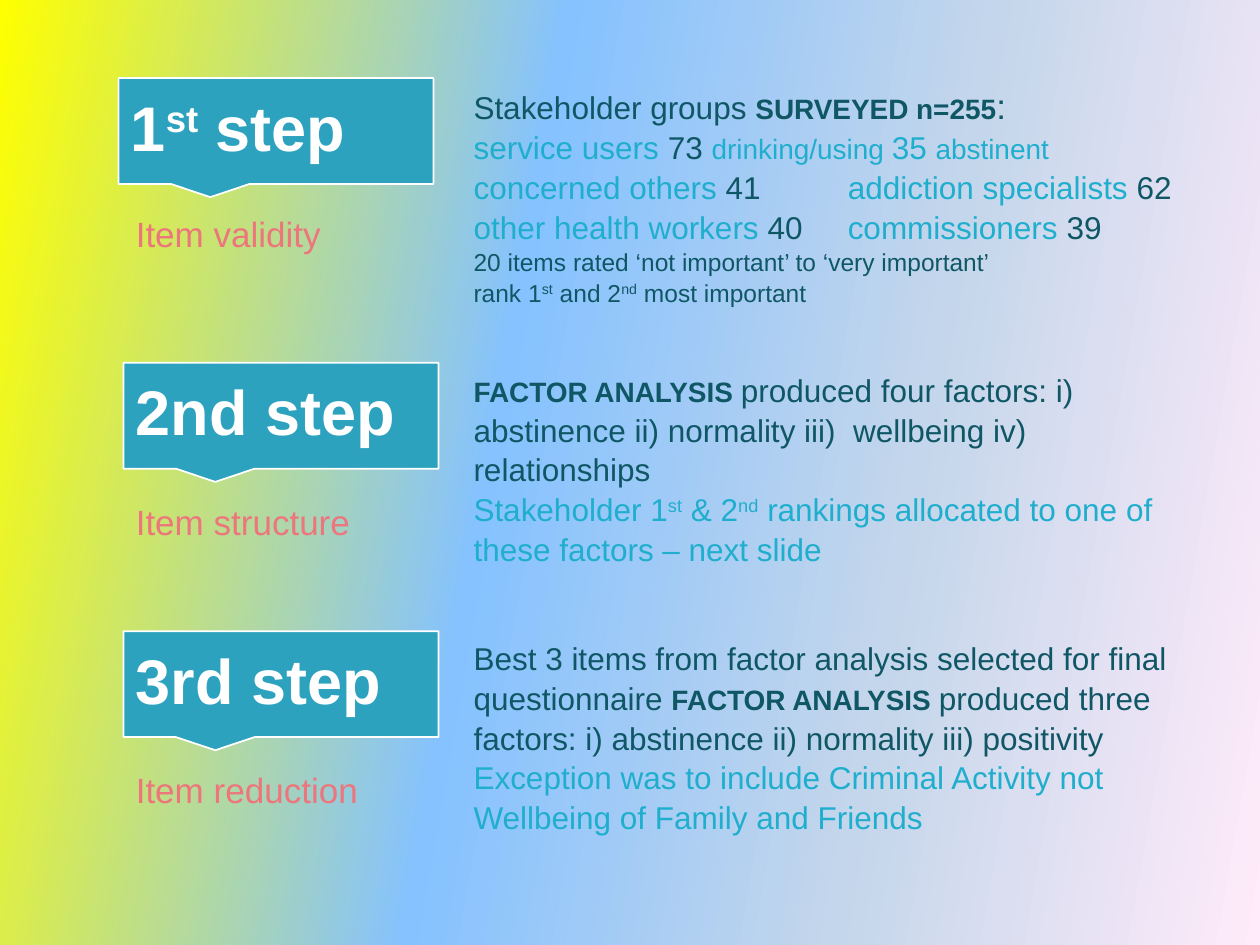
import copy

import pptx
import pptx.dml.color
import pptx.enum.shapes
import pptx.enum.text
import pptx.oxml
import pptx.oxml.ns
import pptx.util

COLUMNS, ROWS = 100, 75
CELL = pptx.util.Inches(0.1)
FONT = "Arial"
LINE_SPACING = 1.05
TAB_COLUMN = 29.7
CALLOUT_SIZE = (25, 8.4)
LABEL_SIZE = (24.4, 4.4)
LABEL_COLUMN, DETAIL_COLUMN, DETAIL_WIDTH = 9.8, 36.6, 59.8

COLORS = {
    "dark": "105766",
    "bright": "1FAECD",
    "label": "EC767C",
    "callout": "2DA2BF",
    "white": "FFFFFF",
}
BACKGROUND_STOPS = [(0, "FFFF00"), (40, "85C2FF"), (70, "C4D6EB"), (100, "FFEBFA")]

STYLES = {
    "heading": (36, "white", True, False),
    "heading super": (36, "white", True, True),
    "label": (20, "label", False, False),
    "dark": (18, "dark", False, False),
    "bright": (18, "bright", False, False),
    "bright super": (18, "bright", False, True),
    "strong": (16, "dark", True, False),
    "colon": (20, "dark", False, False),
    "minor": (16, "bright", False, False),
    "note": (14, "dark", False, False),
    "note super": (14, "dark", False, True),
}

STEPS = [
    {
        "heading": [("1", "heading"), ("st", "heading super"), (" step", "heading")],
        "callout": (9.4, 6.2),
        "label": "Item validity",
        "label_row": 16.2,
        "detail_row": 5.2,
        "detail_height": 20.5,
        "anchor": "MIDDLE",
        "detail": [
            [("Stakeholder groups ", "dark"), ("SURVEYED n=255", "strong"), (":", "colon")],
            [("service users ", "bright"), ("73 ", "dark"), ("drinking/using ", "minor"),
             ("35 ", "bright"), ("abstinent", "minor")],
            [("concerned others ", "bright"), ("41\t", "dark"),
             ("addiction specialists ", "bright"), ("62", "dark")],
            [("other health workers ", "bright"), ("40\t", "dark"),
             ("commissioners ", "bright"), ("39", "dark")],
            [("20 items rated ‘not important’ to ‘very important’", "note")],
            [("rank 1", "note"), ("st", "note super"), (" and 2", "note"),
             ("nd", "note super"), (" most important", "note")],
        ],
    },
    {
        "heading": [("2nd step", "heading")],
        "callout": (9.8, 28.8),
        "label": "Item structure",
        "label_row": 39.1,
        "detail_row": 28.8,
        "detail_height": 16.2,
        "anchor": "TOP",
        "detail": [
            [("FACTOR ANALYSIS ", "strong"),
             ("produced four factors: i) abstinence ii) normality iii)  wellbeing "
              "iv) relationships", "dark")],
            [("Stakeholder 1", "bright"), ("st", "bright super"), (" & 2", "bright"),
             ("nd", "bright super"),
             (" rankings allocated to one of these factors – next slide", "bright")],
        ],
    },
    {
        "heading": [("3rd step", "heading")],
        "callout": (9.8, 50.1),
        "label": "Item reduction",
        "label_row": 60.3,
        "detail_row": 50.1,
        "detail_height": 16.2,
        "anchor": "TOP",
        "detail": [
            [("Best 3 items from factor analysis selected for final questionnaire ", "dark"),
             ("FACTOR ANALYSIS ", "strong"),
             ("produced three factors: i) abstinence ii) normality iii) positivity", "dark")],
            [("Exception was to include Criminal Activity not Wellbeing of Family "
              "and Friends", "bright")],
        ],
    },
]


def rgb(name):
    return pptx.dml.color.RGBColor.from_string(COLORS[name])


def cells(*counts):
    return [int(count * CELL) for count in counts]


def paint_background(slide):
    fill = slide.background.fill
    fill.gradient()
    fill.gradient_angle = 350
    stops = slide.element.find(".//" + pptx.oxml.ns.qn("a:gsLst"))
    template = copy.deepcopy(stops[0])
    for stop in list(stops):
        stops.remove(stop)
    for _ in BACKGROUND_STOPS:
        stops.append(copy.deepcopy(template))
    for stop, (position, color) in zip(fill.gradient_stops, BACKGROUND_STOPS):
        stop.position = position / 100
        stop.color.rgb = pptx.dml.color.RGBColor.from_string(color)


def add_tab_stop(paragraph):
    properties = paragraph._p.get_or_add_pPr()
    tabs = pptx.oxml.parse_xml(
        f'<a:tabLst {pptx.oxml.ns.nsdecls("a")}>'
        f'<a:tab pos="{cells(TAB_COLUMN)[0]}" algn="l"/></a:tabLst>'
    )
    properties.append(tabs)


def write_runs(paragraph, pieces):
    paragraph.alignment = pptx.enum.text.PP_ALIGN.LEFT
    paragraph.line_spacing = LINE_SPACING
    for text, style in pieces:
        size, color, bold, raised = STYLES[style]
        run = paragraph.add_run()
        run.text = text
        run.font.name = FONT
        run.font.size = pptx.util.Pt(size)
        run.font.bold = bold
        run.font.color.rgb = rgb(color)
        if raised:
            run._r.get_or_add_rPr().set("baseline", "30000")
    if any("\t" in text for text, _ in pieces):
        add_tab_stop(paragraph)


def fill_frame(frame, lines, anchor="TOP"):
    frame.word_wrap = True
    frame.vertical_anchor = pptx.enum.text.MSO_ANCHOR[anchor]
    for index, pieces in enumerate(lines):
        paragraph = frame.add_paragraph() if index else frame.paragraphs[0]
        write_runs(paragraph, pieces)


def add_callout(slide, column, row, heading):
    callout = slide.shapes.add_shape(
        pptx.enum.shapes.MSO_SHAPE.RECTANGULAR_CALLOUT, *cells(column, row, *CALLOUT_SIZE)
    )
    callout.shadow.inherit = False
    callout.fill.solid()
    callout.fill.fore_color.rgb = rgb("callout")
    callout.line.color.rgb = rgb("white")
    callout.line.width = pptx.util.Pt(1)
    fill_frame(callout.text_frame, [heading])


def add_text(slide, column, row, width, height, lines, anchor="TOP"):
    box = slide.shapes.add_textbox(*cells(column, row, width, height))
    fill_frame(box.text_frame, lines, anchor)


def add_step(slide, step):
    add_callout(slide, *step["callout"], step["heading"])
    add_text(slide, LABEL_COLUMN, step["label_row"], *LABEL_SIZE, [[(step["label"], "label")]])
    add_text(slide, DETAIL_COLUMN, step["detail_row"], DETAIL_WIDTH, step["detail_height"],
             step["detail"], step["anchor"])


def main():
    deck = pptx.Presentation()
    deck.slide_width, deck.slide_height = cells(COLUMNS, ROWS)
    slide = deck.slides.add_slide(deck.slide_layouts[6])
    paint_background(slide)
    for step in STEPS:
        add_step(slide, step)
    deck.save("out.pptx")


if __name__ == "__main__":
    main()
